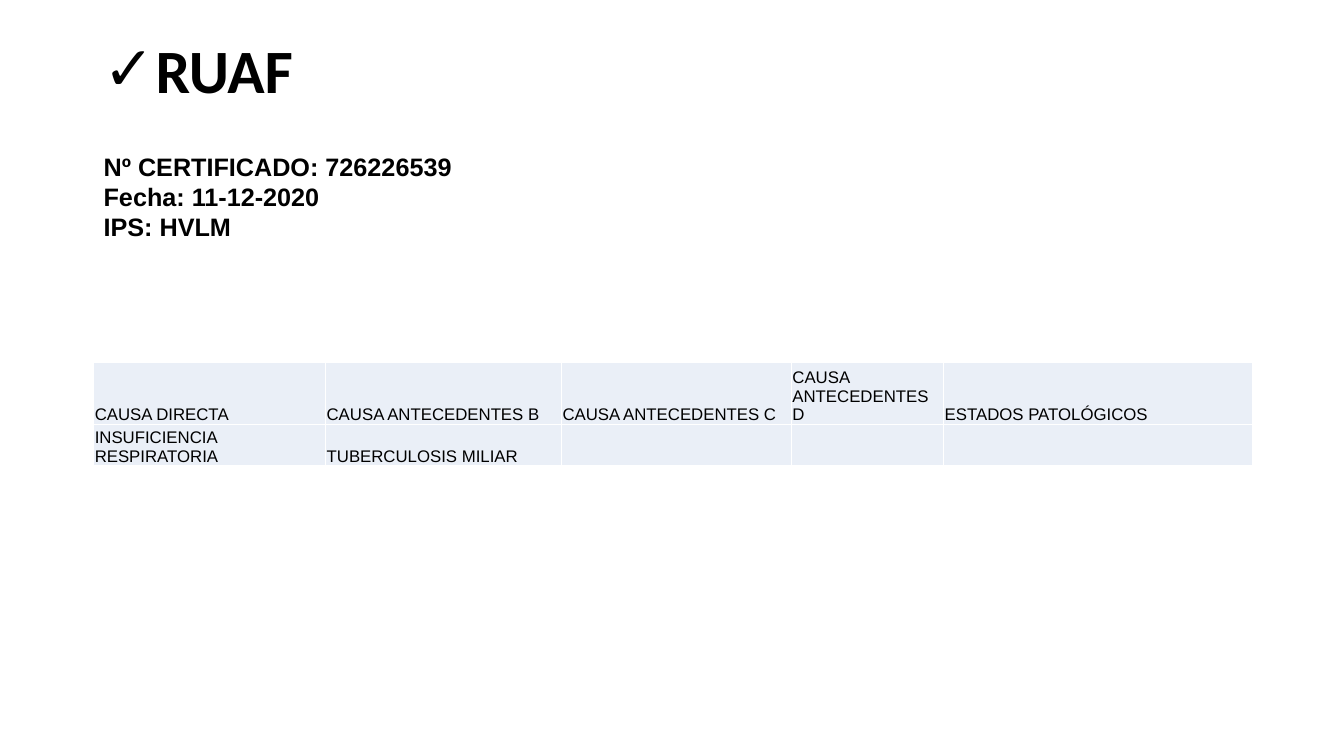
import pptx
import pptx.util
import pptx.dml.color
import pptx.enum.text
import pptx.oxml
import pptx.oxml.ns
import lxml.etree

TITLE = "RUAF"
FACTS = ["Nº CERTIFICADO: 726226539", "Fecha: 11-12-2020", "IPS: HVLM"]
ROWS = [
    ["CAUSA DIRECTA", "CAUSA ANTECEDENTES B", "CAUSA ANTECEDENTES C",
     "CAUSA ANTECEDENTES D", "ESTADOS PATOLÓGICOS"],
    ["INSUFICIENCIA RESPIRATORIA", "TUBERCULOSIS MILIAR", "", "", ""],
]
WIDTHS = [2.3, 2.34, 2.28, 1.51, 3.06]
HEIGHTS = [0.61, 0.41]
COLORS = {"text": "000000", "cell": "EAEFF7", "line": "FFFFFF"}
LEFT = 0.93

Inches = pptx.util.Inches
Anchor = pptx.enum.text.MSO_ANCHOR
qn = pptx.oxml.ns.qn


def color(key):
    return pptx.dml.color.RGBColor.from_string(COLORS[key])


def style(para, size, name="Arial", bold=False):
    para.alignment = pptx.enum.text.PP_ALIGN.LEFT
    font = para.font
    font.size, font.name, font.bold = pptx.util.Pt(size), name, bold
    font.color.rgb = color("text")


def border(cell):
    props = cell._tc.get_or_add_tcPr()
    for i, side in enumerate(("lnL", "lnR", "lnT", "lnB")):
        line = pptx.oxml.parse_xml(
            f'<a:{side} {pptx.oxml.ns.nsdecls("a")} w="12700"><a:solidFill>'
            f'<a:srgbClr val="{COLORS["line"]}"/></a:solidFill></a:{side}>')
        props.insert(i, line)


def add_title(slide):
    title = slide.shapes.title
    title.left, title.top = Inches(LEFT), Inches(0)
    title.width, title.height = Inches(11.5), Inches(1.45)
    frame = title.text_frame
    frame.text = TITLE
    frame.vertical_anchor = Anchor.MIDDLE
    para = frame.paragraphs[0]
    para.line_spacing = 0.9
    props = para._p.get_or_add_pPr()
    props.set("marL", str(Inches(0.31)))
    props.set("indent", str(-Inches(0.31)))
    lxml.etree.SubElement(props, qn("a:buFont")).set("typeface", "Arial")
    lxml.etree.SubElement(props, qn("a:buChar")).set("char", "✓")
    style(para, 44, "Calibri", True)


def add_facts(slide):
    box = slide.shapes.add_textbox(
        Inches(LEFT), Inches(1.45), Inches(9.5), Inches(1.01))
    frame = box.text_frame
    frame.word_wrap = True
    frame.text = "\n".join(FACTS)
    for para in frame.paragraphs:
        style(para, 18, bold=True)


def add_causes(slide):
    table = slide.shapes.add_table(
        len(ROWS), len(WIDTHS), Inches(LEFT), Inches(3.6),
        Inches(sum(WIDTHS)), Inches(sum(HEIGHTS))).table
    table.first_row = table.horz_banding = False
    for col, width in zip(table.columns, WIDTHS):
        col.width = Inches(width)
    for row, height, texts in zip(table.rows, HEIGHTS, ROWS):
        row.height = Inches(height)
        for cell, text in zip(row.cells, texts):
            cell.text = text
            cell.vertical_anchor = Anchor.BOTTOM
            cell.margin_left = cell.margin_right = cell.margin_top = Inches(0.01)
            cell.margin_bottom = 0
            cell.fill.solid()
            cell.fill.fore_color.rgb = color("cell")
            border(cell)
            style(cell.text_frame.paragraphs[0], 12)


def main():
    deck = pptx.Presentation()
    deck.slide_width, deck.slide_height = Inches(13.33), Inches(7.5)
    slide = deck.slides.add_slide(deck.slide_layouts[5])
    add_title(slide)
    add_facts(slide)
    add_causes(slide)
    deck.save("out.pptx")


if __name__ == "__main__":
    main()
